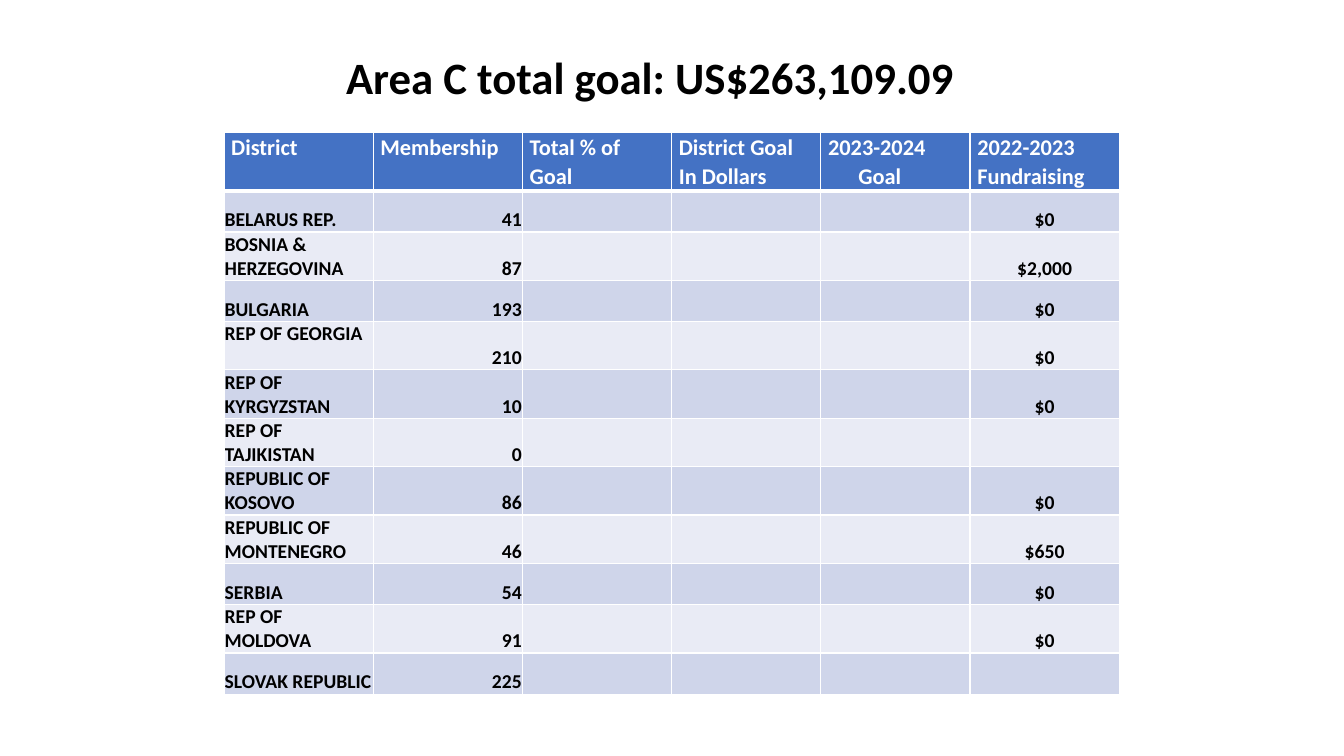
from lxml import etree
from pptx import Presentation
from pptx.dml.color import RGBColor
from pptx.enum import text
from pptx.oxml import ns
from pptx.util import Pt

TITLE = "Area C total goal: US$263,109.09"
HEADERS = [
    ["District"],
    ["Membership"],
    ["Total % of Goal"],
    ["District Goal In Dollars"],
    ["2023-2024", "Goal"],
    ["2022-2023", "Fundraising"],
]
# district, membership, 2022-2023 fundraising, lines of height
DISTRICTS = [
    ("BELARUS REP.", "41", "$0", 1),
    ("BOSNIA & HERZEGOVINA", "87", "$2,000", 2),
    ("BULGARIA", "193", "$0", 1),
    ("REP OF GEORGIA", "210", "$0", 2),
    ("REP OF KYRGYZSTAN", "10", "$0", 2),
    ("REP OF TAJIKISTAN", "0", "", 2),
    ("REPUBLIC OF KOSOVO", "86", "$0", 2),
    ("REPUBLIC OF MONTENEGRO", "46", "$650", 2),
    ("SERBIA", "54", "$0", 1),
    ("REP OF MOLDOVA", "91", "$0", 2),
    ("SLOVAK REPUBLIC", "225", "", 1),
]
TOP_ALIGNED = "REP OF GEORGIA"
GOAL_INDENT = 21.7
COLORS = {"header": "4472C4", "odd": "CFD5EA", "even": "E9EBF5",
          "white": "FFFFFF", "black": "000000"}
FONT = "Calibri"
LEFT, TOP, COLUMN_WIDTH = 160, 94.5, 106.6
HEADER_HEIGHT = 41
ROW_HEIGHTS = {1: 29.4, 2: 34.4}


def add_run(paragraph, words, size, color):
    run = paragraph.add_run()
    run.text = words
    run.font.name = FONT
    run.font.size = Pt(size)
    run.font.bold = True
    run.font.color.rgb = RGBColor.from_string(COLORS[color])


def set_margins(cell, side, top):
    cell.margin_left = cell.margin_right = Pt(side)
    cell.margin_top, cell.margin_bottom = Pt(top), Pt(0)


def style_cell(cell, fill, top_line=1, bottom_line=1):
    """Draw white borders, then the fill, in the order the schema asks for."""
    properties = cell._tc.get_or_add_tcPr()
    for side, width in (("L", 1), ("R", 1), ("T", top_line), ("B", bottom_line)):
        line = etree.SubElement(properties, ns.qn(f"a:ln{side}"), w=str(Pt(width)))
        solid = etree.SubElement(line, ns.qn("a:solidFill"))
        etree.SubElement(solid, ns.qn("a:srgbClr"), val=COLORS["white"])
    cell.fill.solid()
    cell.fill.fore_color.rgb = RGBColor.from_string(COLORS[fill])


def add_title(slide):
    title = slide.shapes.title
    title.left, title.top, title.width, title.height = Pt(240), Pt(29.5), Pt(480), Pt(47)
    frame = title.text_frame
    frame.word_wrap = True
    frame.auto_size = text.MSO_AUTO_SIZE.NONE
    frame.vertical_anchor = text.MSO_ANCHOR.TOP
    paragraph = frame.paragraphs[0]
    paragraph.alignment = text.PP_ALIGN.LEFT
    paragraph.line_spacing = 1.07
    paragraph.space_after = Pt(8)
    add_run(paragraph, TITLE, 32, "black")


def fill_header(table):
    table.rows[0].height = Pt(HEADER_HEIGHT)
    for column, lines in enumerate(HEADERS):
        cell = table.cell(0, column)
        style_cell(cell, "header", bottom_line=3)
        set_margins(cell, 5.2, 0)
        for index, words in enumerate(lines):
            frame = cell.text_frame
            paragraph = frame.add_paragraph() if index else frame.paragraphs[0]
            paragraph.line_spacing = 1.07
            if words == "Goal":
                paragraph._p.get_or_add_pPr().set("marL", str(Pt(GOAL_INDENT)))
            add_run(paragraph, words, 16, "white")


def fill_districts(table):
    align = text.PP_ALIGN
    for row, (district, members, raised, lines) in enumerate(DISTRICTS, 1):
        table.rows[row].height = Pt(ROW_HEIGHTS[lines])
        entries = {0: (district, align.LEFT), 1: (members, align.RIGHT),
                   5: (raised, align.CENTER)}
        for column in range(len(HEADERS)):
            cell = table.cell(row, column)
            style_cell(cell, "odd" if row % 2 else "even", top_line=3 if row == 1 else 1)
            words, alignment = entries.get(column, ("", None))
            if not words:
                continue
            set_margins(cell, 0.5, 0.5)
            cell.vertical_anchor = (text.MSO_ANCHOR.TOP if words == TOP_ALIGNED
                                    else text.MSO_ANCHOR.BOTTOM)
            paragraph = cell.text_frame.paragraphs[0]
            paragraph.alignment = alignment
            add_run(paragraph, words, 14, "black")


def main():
    presentation = Presentation()
    presentation.slide_width, presentation.slide_height = Pt(960), Pt(540)
    slide = presentation.slides.add_slide(presentation.slide_layouts[5])
    height = HEADER_HEIGHT + sum(ROW_HEIGHTS[entry[-1]] for entry in DISTRICTS)
    table = slide.shapes.add_table(
        len(DISTRICTS) + 1, len(HEADERS), Pt(LEFT), Pt(TOP),
        Pt(COLUMN_WIDTH * len(HEADERS)), Pt(height)).table
    fill_header(table)
    fill_districts(table)
    add_title(slide)
    presentation.save("out.pptx")


if __name__ == "__main__":
    main()
